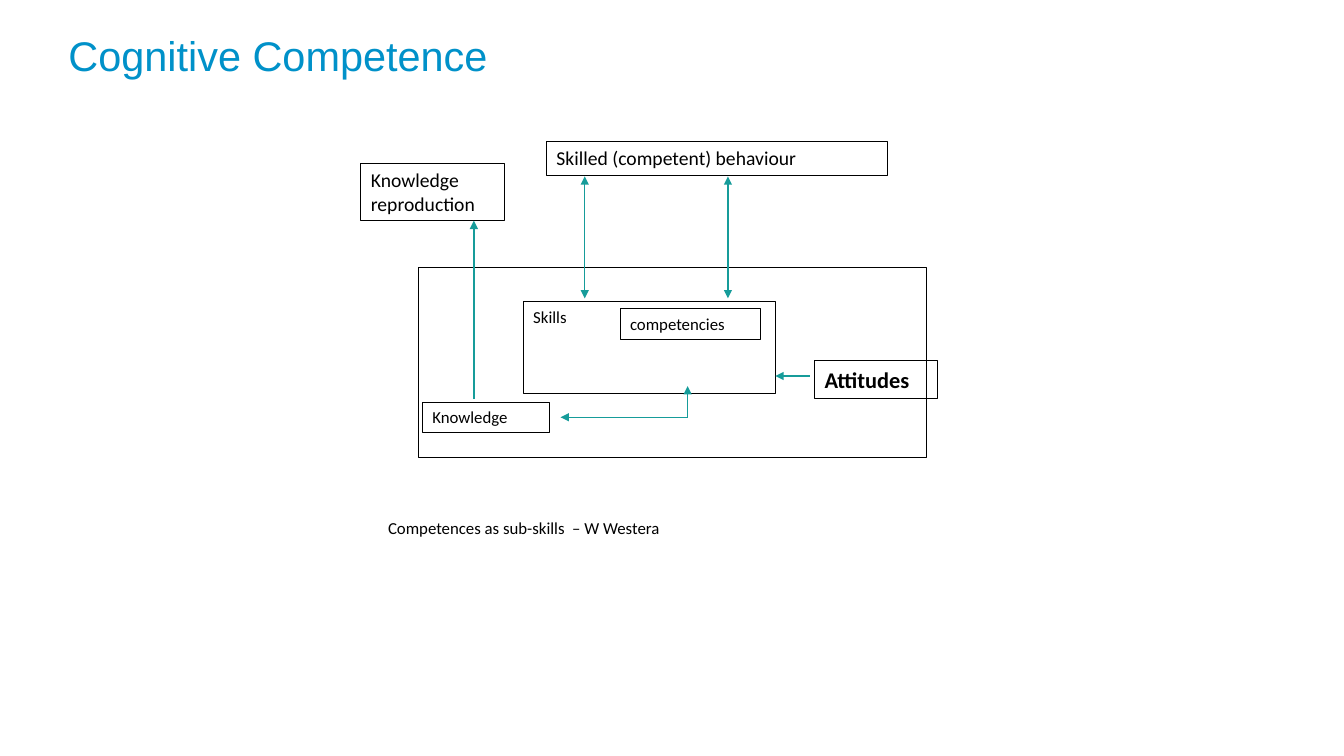
from dataclasses import dataclass

from lxml.etree import SubElement
from pptx import Presentation
from pptx.dml.color import RGBColor as Color
from pptx.enum.shapes import MSO_CONNECTOR as Connector, MSO_SHAPE as Shape
from pptx.enum.text import MSO_ANCHOR as Anchor, PP_ALIGN as Align
from pptx.oxml.ns import qn
from pptx.util import Inches, Pt


@dataclass(frozen=True)
class Theme:
    title_color: Color = Color.from_string("0091C9")
    ink: Color = Color.from_string("000000")
    arrow: Color = Color.from_string("169C9A")
    title_font: str = "Arial"
    body_font: str = "Calibri"
    title_size: float = 29.6
    strong_size: float = 16
    label_size: float = 14
    small_size: float = 12
    frame_line: float = 0.5
    box_line: float = 0.75
    arrow_line: float = 1


@dataclass(frozen=True)
class Box:
    left: float
    top: float
    width: float
    height: float

    def inner(self, left, top, width, height):
        return Box(self.left + left, self.top + top, width, height)

    def point(self, column, row):
        return cells(self.left + column), cells(self.top + row)

    def place(self):
        return [cells(n) for n in (self.left, self.top, self.width, self.height)]


THEME = Theme()
CELL = 0.1


def cells(count):
    return Inches(count * CELL)


def apply_format(target, values):
    for name, value in values.items():
        setattr(target, name, value)


def write_text(shape, text, font, color=THEME.ink, paragraph=None, anchor=Anchor.TOP):
    frame = shape.text_frame
    apply_format(frame, {"word_wrap": True, "vertical_anchor": anchor})
    para = frame.paragraphs[0]
    apply_format(para, {"alignment": Align.LEFT, **(paragraph or {})})
    span = para.add_run()
    span.text = text
    apply_format(span.font, {"name": THEME.body_font, **font})
    span.font.color.rgb = color


def add_outline(page, box, width):
    shape = page.shapes.add_shape(Shape.RECTANGLE, *box.place())
    shape.shadow.inherit = False
    shape.fill.background()
    shape.line.color.rgb = THEME.ink
    shape.line.width = Pt(width)
    return shape


def add_label(page, box, text, size, bold=False):
    shape = add_outline(page, box, THEME.box_line)
    write_text(shape, text, {"size": Pt(size), "bold": bold})


def add_arrow(page, box, start, end, both_ends=False):
    arrow = page.shapes.add_connector(
        Connector.STRAIGHT, *box.point(*start), *box.point(*end))
    arrow.line.color.rgb = THEME.arrow
    arrow.line.width = Pt(THEME.arrow_line)
    line = arrow.line._get_or_add_ln()
    for end_tag in ("a:headEnd", "a:tailEnd") if both_ends else ("a:tailEnd",):
        SubElement(line, qn(end_tag), type="triangle")
    SubElement(arrow._element.spPr, qn("a:effectLst"))


def draw_title(page, box, text):
    title = page.shapes.add_textbox(*box.place())
    font = {"name": THEME.title_font, "size": Pt(THEME.title_size)}
    spacing = {"line_spacing": 1.1, "space_before": Pt(10)}
    write_text(title, text, font, THEME.title_color, spacing, Anchor.MIDDLE)


def draw_diagram(page, box):
    add_outline(page, box.inner(5.7, 12.5, 50.4, 18.9), THEME.frame_line)

    labels = [
        ((18.4, 0, 33.8, 3.4), "Skilled (competent) behaviour", THEME.label_size),
        ((0, 2.2, 14.2, 5.7), "Knowledge reproduction", THEME.label_size),
        ((16.1, 15.9, 25, 9.1), "Skills", THEME.small_size),
        ((6.1, 25.9, 12.6, 3), "Knowledge", THEME.small_size),
        ((25.7, 16.6, 13.9, 3.1), "competencies", THEME.small_size),
    ]
    for place, text, size in labels:
        add_label(page, box.inner(*place), text, size)
    add_label(page, box.inner(45, 21.8, 12.2, 3.7), "Attitudes",
              THEME.strong_size, bold=True)

    add_arrow(page, box, (11.2, 25.6), (11.2, 7.9))
    add_arrow(page, box, (44.5, 23.3), (41.1, 23.3))
    for column in (22.2, 36.4):
        add_arrow(page, box, (column, 15.6), (column, 3.5), both_ends=True)
    corner = (32.4, 27.4)
    for end in ((19.8, 27.4), (32.4, 24.3)):
        add_arrow(page, box, corner, end)


def draw_caption(page, box, text):
    caption = page.shapes.add_textbox(*box.place())
    write_text(caption, text, {"size": Pt(THEME.small_size)})


def main():
    deck = Presentation()
    apply_format(deck, {"slide_width": Inches(13.33), "slide_height": Inches(7.5)})
    page = deck.slides.add_slide(deck.slide_layouts[6])
    draw_title(page, Box(5.8, 2.1, 89.2, 6.3), "Cognitive Competence")
    draw_diagram(page, Box(35.8, 14, 57.2, 31.4))
    draw_caption(page, Box(37.5, 50.9, 52.8, 3),
                 "Competences as sub-skills  – W Westera")
    deck.save("out.pptx")


if __name__ == "__main__":
    main()
